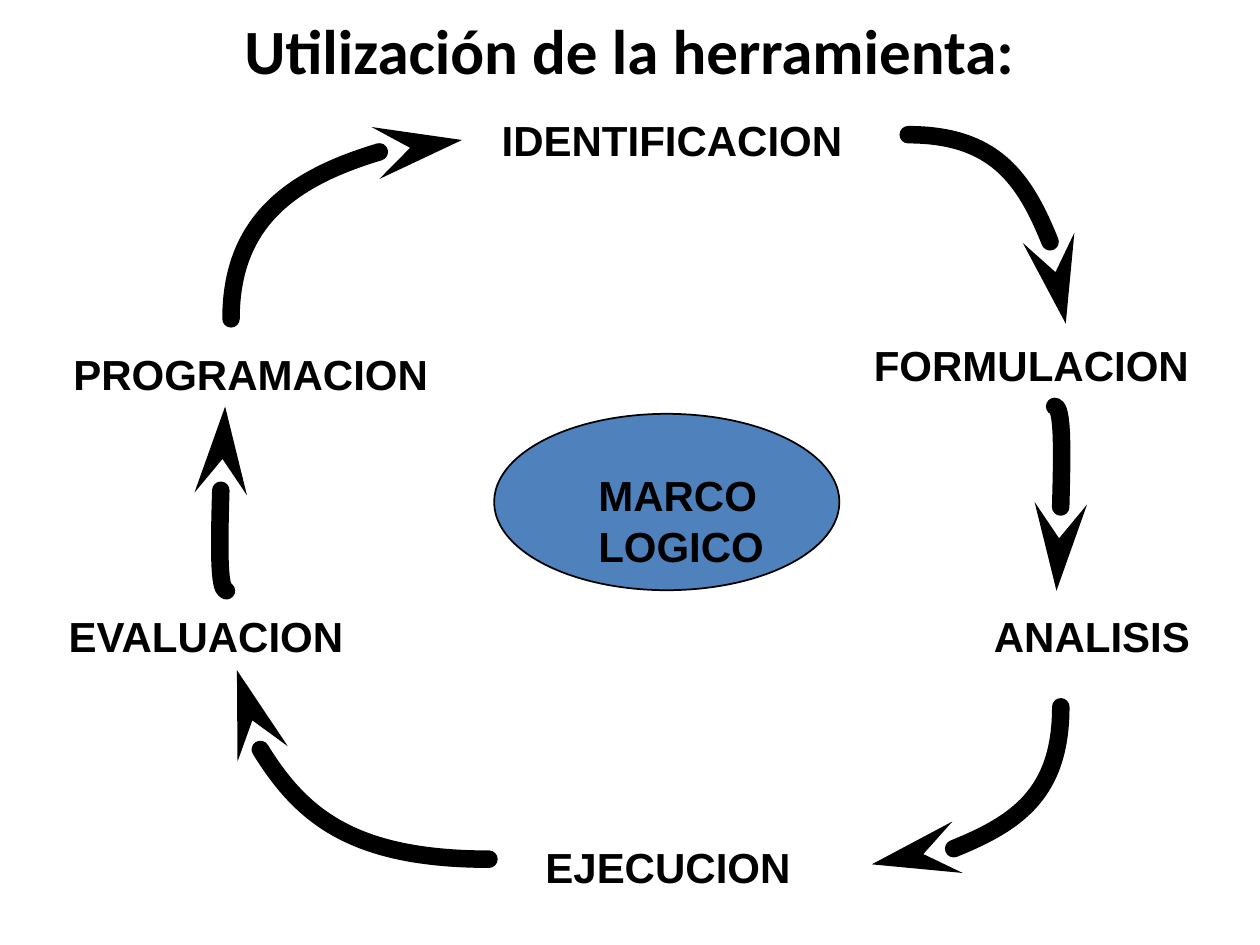
from lxml.etree import SubElement
from pptx import Presentation
from pptx.dml.color import RGBColor
from pptx.enum.shapes import MSO_SHAPE
from pptx.enum.text import MSO_ANCHOR, MSO_AUTO_SIZE, PP_ALIGN
from pptx.oxml.ns import qn
from pptx.util import Pt

BLACK = RGBColor(0x00, 0x00, 0x00)
BLUE = RGBColor(0x4F, 0x81, 0xBD)

TITLE = ("Utilización de la herramienta:", (0, 0.7, 719.4, 55.5))
CORE = (282.4, 236.5, 197.3, 100.8)
# lines of text, (left, top, width, height)
LABELS = [
    (["IDENTIFICACION"], (279.6, 62, 211, 36.4)),
    (["FORMULACION"], (492.3, 190.4, 196.6, 36.4)),
    (["ANALISIS"], (560.9, 345.2, 127.4, 36.4)),
    (["EJECUCION"], (304.6, 477.4, 156.2, 36.4)),
    (["EVALUACION"], (32.2, 345.6, 172.8, 36.4)),
    (["PROGRAMACION"], (34.8, 195.5, 219.6, 36.4)),
    (["MARCO", "LOGICO"], (334.8, 265, 110.2, 65.5)),
]
# start, corner the curve bends towards, end, rotation
ARROWS = [
    ((519, 77), (609, 77), (609, 185), 0),
    ((655.7, 280.7), (655.7, 289.1), (550.7, 289.1), 274),
    ((606.2, 403.9), (606.2, 493.9), (498.2, 493.9), 0),
    ((279.4, 491), (135.4, 491), (135.4, 383), 0),
    ((181.5, 280.9), (181.5, 289), (76.5, 289), 94),
    ((132, 182.2), (132, 80), (264, 80), 0),
]
BEND = 0.55  # share of the way to the corner that makes a quarter ellipse

TITLE_FONT = {"name": "Calibri", "size": Pt(36), "bold": True}
LABEL_FONT = {"name": "Arial", "size": Pt(24), "bold": True}
TITLE_FRAME = {
    "word_wrap": True, "vertical_anchor": MSO_ANCHOR.MIDDLE,
    "margin_left": Pt(3.6), "margin_right": Pt(3.6),
}
LABEL_FRAME = {"word_wrap": False, "auto_size": MSO_AUTO_SIZE.SHAPE_TO_FIT_TEXT}


def set_attributes(target, values):
    for name, value in values.items():
        setattr(target, name, value)


def in_points(lengths):
    return [Pt(length) for length in lengths]


def add_text(slide, lines, box, frame_format, font_format, align):
    frame = slide.shapes.add_textbox(*in_points(box)).text_frame
    set_attributes(frame, frame_format)
    frame.text = "\n".join(lines)
    for paragraph in frame.paragraphs:
        paragraph.alignment = align
        font = paragraph.runs[0].font
        set_attributes(font, font_format)
        font.color.rgb = BLACK


def set_outline(shape, weight):
    shape.shadow.inherit = False
    shape.line.color.rgb = BLACK
    shape.line.width = Pt(weight)


def towards(point, corner):
    return [a + BEND * (b - a) for a, b in zip(point, corner)]


def bend_segment(curve, points):
    """Turn the only straight segment of the outline into a Bézier curve."""
    segment = curve._element.find(".//" + qn("a:lnTo"))
    bezier = SubElement(segment.getparent(), qn("a:cubicBezTo"))
    for x, y in points:
        SubElement(bezier, qn("a:pt"), x=str(Pt(x) - curve.left), y=str(Pt(y) - curve.top))
    segment.getparent().remove(segment)


def add_arrow(slide, start, corner, end, rotation):
    builder = slide.shapes.build_freeform(*in_points(start))
    builder.add_line_segments([in_points(end)], close=False)
    curve = builder.convert_to_shape()
    bend_segment(curve, [towards(start, corner), towards(end, corner), end])
    curve.rotation = rotation
    curve.fill.background()
    set_outline(curve, 10)
    line = curve.line._get_or_add_ln()
    line.set("cap", "rnd")
    SubElement(line, qn("a:round"))
    SubElement(line, qn("a:tailEnd"), type="stealth", w="med", len="lg")


def main():
    presentation = Presentation()
    presentation.slide_width, presentation.slide_height = Pt(720), Pt(540)
    slide = presentation.slides.add_slide(presentation.slide_layouts[6])

    core = slide.shapes.add_shape(MSO_SHAPE.OVAL, *in_points(CORE))
    core.fill.solid()
    core.fill.fore_color.rgb = BLUE
    set_outline(core, 1)
    for lines, box in LABELS:
        add_text(slide, lines, box, LABEL_FRAME, LABEL_FONT, PP_ALIGN.LEFT)
    for arrow in ARROWS:
        add_arrow(slide, *arrow)
    title, title_box = TITLE
    add_text(slide, [title], title_box, TITLE_FRAME, TITLE_FONT, PP_ALIGN.CENTER)

    presentation.save("out.pptx")


if __name__ == "__main__":
    main()
